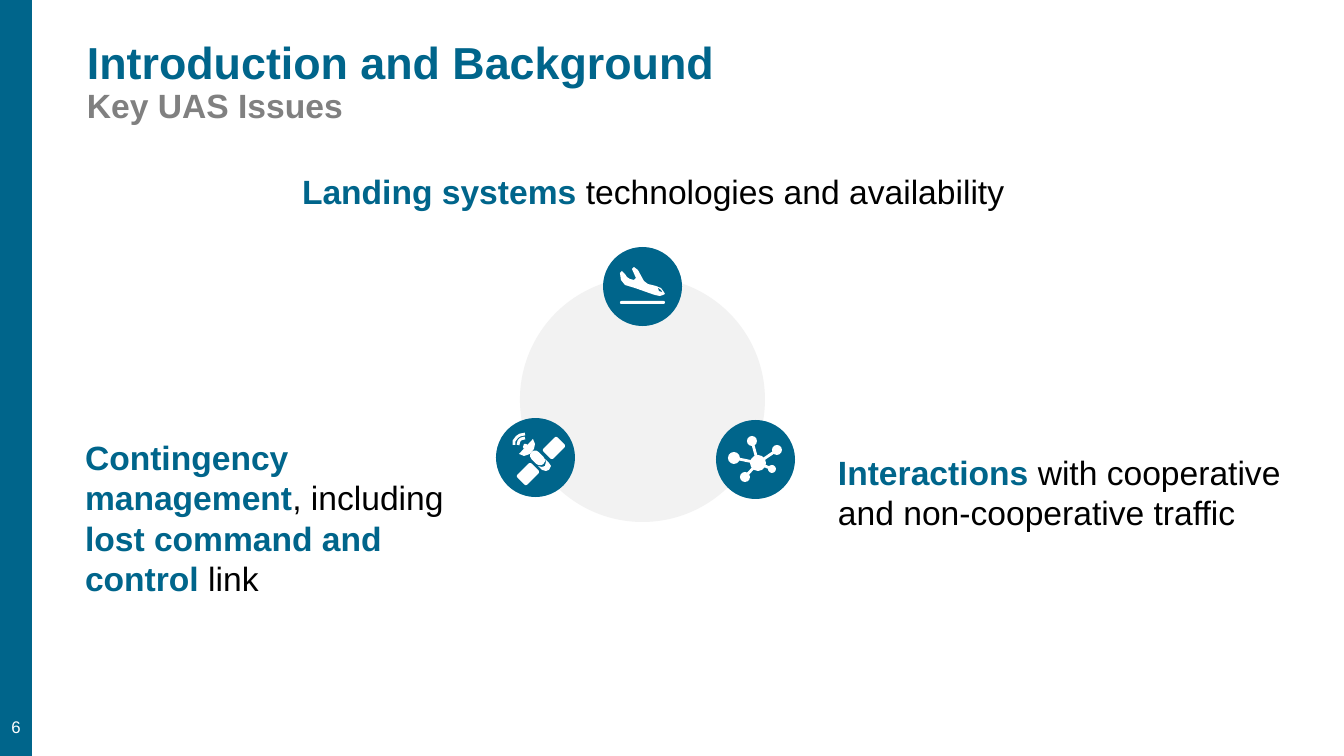
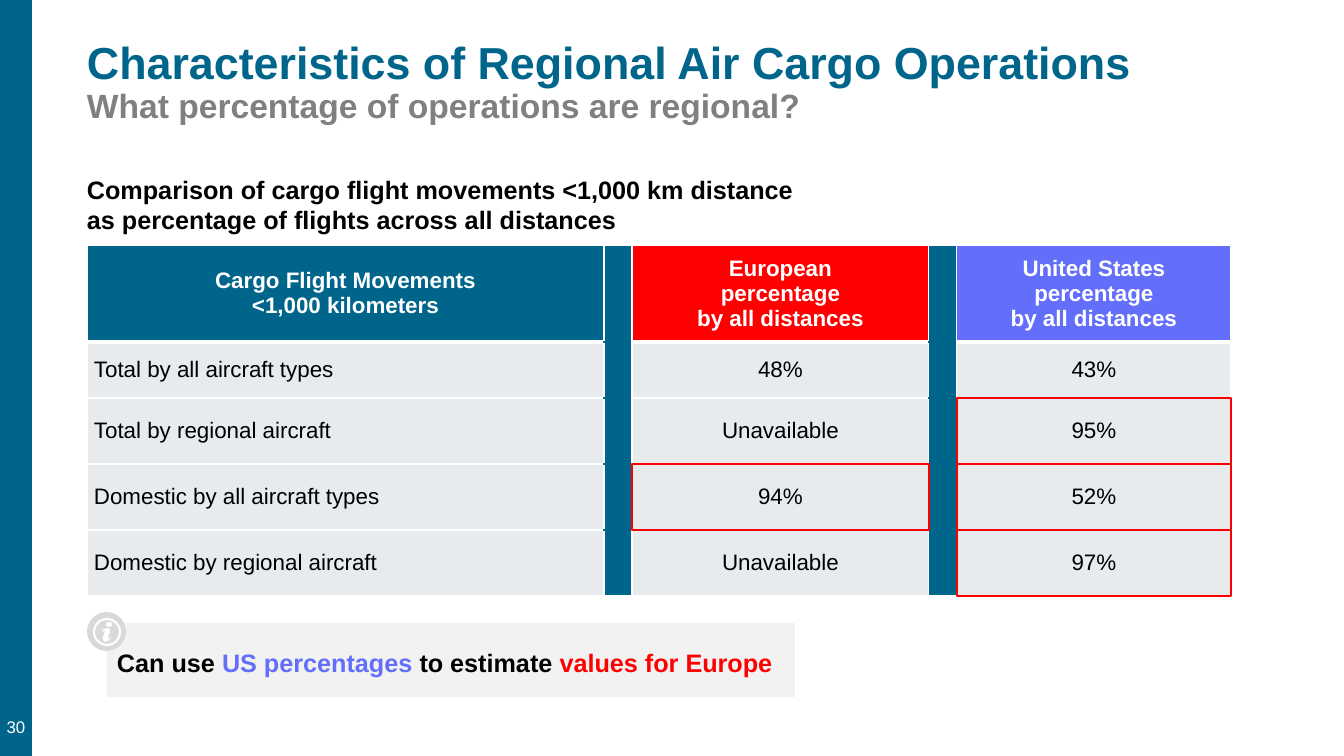
"""Build two briefing slides: key UAS issues and regional cargo percentages."""
from dataclasses import dataclass

from lxml import etree
from pptx import Presentation
from pptx.dml.color import RGBColor
from pptx.enum.shapes import MSO_CONNECTOR, MSO_SHAPE
from pptx.enum.text import MSO_ANCHOR, PP_ALIGN
from pptx.oxml.ns import qn
from pptx.shapes.autoshape import Shape
from pptx.shapes.shapetree import GroupShapes
from pptx.slide import Slide
from pptx.table import _Cell
from pptx.util import Emu, Pt

PX = 914400 / 100.8
FONT = "Arial"
TEAL = RGBColor(0x00, 0x65, 0x8B)
WHITE = RGBColor(0xFF, 0xFF, 0xFF)
BLACK = RGBColor(0x00, 0x00, 0x00)
GRAY = RGBColor(0x80, 0x80, 0x80)
PALE = RGBColor(0xF2, 0xF2, 0xF2)
SILVER = RGBColor(0xD9, 0xD9, 0xD9)
ROW_FILL = RGBColor(0xE7, 0xEB, 0xEE)
RED = RGBColor(0xFF, 0x00, 0x00)
VIOLET = RGBColor(0x63, 0x6E, 0xFA)

RECT, OVAL, ROUND = MSO_SHAPE.RECTANGLE, MSO_SHAPE.OVAL, MSO_SHAPE.ROUNDED_RECTANGLE
LEFT, CENTER = PP_ALIGN.LEFT, PP_ALIGN.CENTER
TOP, MIDDLE, BOTTOM = MSO_ANCHOR.TOP, MSO_ANCHOR.MIDDLE, MSO_ANCHOR.BOTTOM
STRAIGHT = MSO_CONNECTOR.STRAIGHT

Points = list[tuple[int, int]]


@dataclass(frozen=True)
class Box:
    """Hold a rectangle in px."""
    left: int
    top: int
    width: int
    height: int

    def emu(self) -> tuple[Emu, Emu, Emu, Emu]:
        """Return the rectangle in EMU."""
        return px(self.left), px(self.top), px(self.width), px(self.height)


@dataclass(frozen=True)
class Span:
    """Hold a stretch of text in one format."""
    text: str
    color: RGBColor = BLACK
    size: int = 24
    bold: bool = False
    new_line: bool = False


@dataclass(frozen=True)
class Node:
    """Hold a round network node by its centre."""
    x: int
    y: int
    diameter: int


SLIDE = Box(0, 0, 1344, 756)
BAND = Box(0, 0, 32, 756)

ISSUES = [
    (Box(75, 432, 415, 173), [
        Span("Contingency management", TEAL, bold=True), Span(", including "),
        Span("lost command and control ", TEAL, bold=True), Span("link")]),
    (Box(828, 447, 465, 92), [
        Span("Interactions ", TEAL, bold=True),
        Span("with cooperative and non-cooperative traffic")]),
    (Box(292, 166, 800, 50), [
        Span("Landing systems ", TEAL, bold=True),
        Span("technologies and availability")]),
]

PLANE = [(663, 295), (660, 296), (655, 295), (652, 294), (635, 288), (625, 285),
         (621, 280), (620, 273), (622, 271), (625, 274), (627, 277), (630, 279),
         (634, 280), (636, 278), (632, 269), (634, 267), (638, 270), (644, 281),
         (648, 284), (656, 286), (661, 288), (664, 292), (665, 294)]
COCKPIT = [(658, 288), (659, 291), (662, 292), (661, 290)]
DISH = [(519, 454), (524, 456), (530, 454), (534, 449), (535, 444), (533, 439)]
FEED = [(524, 444), (523, 447), (524, 449), (528, 445), (526, 444)]
NOSE = [(545, 466), (542, 467), (538, 466), (542, 470), (546, 471), (549, 470),
        (551, 466), (549, 463), (545, 459), (546, 462)]
WAVES = [[(518, 445), (519, 441), (521, 439), (525, 438)],
         [(514, 445), (514, 441), (517, 437), (520, 435), (525, 434)]]
INFO_STEM = [(102, 631), (104, 629), (107, 628), (110, 629), (110, 632), (108, 638),
             (109, 639), (111, 637), (111, 638), (108, 641), (105, 642), (103, 640),
             (103, 637), (105, 631), (104, 630), (103, 632)]
HUB = Node(758, 463, 16)
NODES = [Node(734, 458, 12), Node(752, 441, 10), Node(777, 450, 10),
         Node(772, 469, 8), Node(745, 477, 10)]

TABLE_LEFT, TABLE_TOP = 87, 245
COLUMNS = [517, 28, 297, 28, 274]
ROWS = [97, 56, 66, 66, 66]
HEADER_FILLS = [TEAL, TEAL, RED, TEAL, VIOLET]
TABLE_TEXT = [
    ["Cargo Flight Movements\n<1,000 kilometers", "",
     "European\npercentage\nby all distances", "",
     "United States percentage\nby all distances"],
    ["Total by all aircraft types", "", "48%", "", "43%"],
    ["Total by regional aircraft", "", "Unavailable", "", "95%"],
    ["Domestic by all aircraft types", "", "94%", "", "52%"],
    ["Domestic by regional aircraft", "", "Unavailable", "", "97%"],
]
HIGHLIGHTS = [(3, 2), (3, 4), (4, 4), (2, 4)]


def px(value: int) -> Emu:
    """Turn px into EMU."""
    return Emu(round(value * PX))


def add_span(para, text: str, *, color: RGBColor, size: int, bold: bool = False) -> None:
    """Add formatted text to a paragraph."""
    run = para.add_run()
    run.text = text
    run.font.name, run.font.size, run.font.bold = FONT, Pt(size), bold
    run.font.color.rgb = color


def add_text(page: Slide, box: Box, spans: list[Span], *, align=LEFT, anchor=TOP,
             inset: tuple[int, int] = (10, 5), wrap: bool = True,
             line_spacing: float = 1.0) -> None:
    """Add a text box with one paragraph of spans."""
    frame = page.shapes.add_textbox(*box.emu()).text_frame
    frame.word_wrap, frame.vertical_anchor = wrap, anchor
    frame.margin_left = frame.margin_right = px(inset[0])
    frame.margin_top = frame.margin_bottom = px(inset[1])
    para = frame.paragraphs[0]
    para.alignment, para.line_spacing = align, line_spacing
    for span in spans:
        if span.new_line:
            para.add_line_break()
        add_span(para, span.text, color=span.color, size=span.size, bold=span.bold)


def paint(shape: Shape, fill: RGBColor | None, line: RGBColor | None, weight: float) -> None:
    """Set fill and line and drop the shadow."""
    shape.shadow.inherit = False
    if fill is None:
        shape.fill.background()
    else:
        shape.fill.solid()
        shape.fill.fore_color.rgb = fill
    if line is None:
        shape.line.fill.background()
    else:
        shape.line.color.rgb = line
        shape.line.width = Pt(weight)


def add_preset(shapes: GroupShapes, kind: MSO_SHAPE, box: Box, *, fill: RGBColor | None = None,
               line: RGBColor | None = None, weight: float = 1.5, turn: int = 0) -> Shape:
    """Add a preset shape."""
    shape = shapes.add_shape(kind, *box.emu())
    shape.rotation = turn
    paint(shape, fill, line, weight)
    return shape


def add_outline(shapes: GroupShapes, points: Points, *, fill: RGBColor | None = None,
                line: RGBColor | None = None, weight: float = 2) -> None:
    """Add a freeform, closed when it is filled."""
    builder = shapes.build_freeform(*points[0], scale=PX)
    builder.add_line_segments(points[1:], close=fill is not None)
    paint(builder.convert_to_shape(), fill, line, weight)


def add_badge(page: Slide, box: Box, fill: RGBColor) -> GroupShapes:
    """Start an icon group on a round badge and return its shapes."""
    shapes = page.shapes.add_group_shape().shapes
    add_preset(shapes, OVAL, box, fill=fill)
    return shapes


def add_spoke(shapes: GroupShapes, start: Node, end: Node) -> None:
    """Join two network nodes."""
    spoke = shapes.add_connector(STRAIGHT, px(start.x), px(start.y), px(end.x), px(end.y))
    spoke.line.color.rgb, spoke.line.width = WHITE, Pt(2)
    etree.SubElement(spoke._element.spPr, qn("a:effectLst"))


def draw_satellite(page: Slide) -> None:
    """Draw the satellite icon."""
    shapes = add_badge(page, Box(496, 418, 79, 79), TEAL)
    for outline in (DISH, FEED, NOSE):
        add_outline(shapes, outline, fill=WHITE)
    for wave in WAVES:
        add_outline(shapes, wave, line=WHITE)
    for box, turn, rounding in ((Box(518, 467, 20, 14), 315, 0.16),
                                (Box(544, 441, 20, 14), 315, 0.16),
                                (Box(529, 453, 17, 10), 45, 0.5)):
        part = add_preset(shapes, ROUND, box, fill=WHITE, turn=turn)
        part.adjustments[0] = rounding


def draw_landing(page: Slide) -> None:
    """Draw the landing plane icon."""
    shapes = add_badge(page, Box(603, 247, 79, 79), TEAL)
    add_outline(shapes, PLANE, fill=WHITE)
    add_outline(shapes, COCKPIT, fill=TEAL)
    runway = add_preset(shapes, ROUND, Box(620, 301, 45, 3), fill=WHITE)
    runway.adjustments[0] = 0.5


def draw_network(page: Slide) -> None:
    """Draw the network icon."""
    shapes = add_badge(page, Box(716, 420, 79, 79), TEAL)
    for node in NODES:
        add_spoke(shapes, HUB, node)
    for node in [HUB, *NODES]:
        half = node.diameter // 2
        add_preset(shapes, OVAL, Box(node.x - half, node.y - half, node.diameter, node.diameter),
                   fill=WHITE)


def draw_info(page: Slide) -> None:
    """Draw the information icon."""
    shapes = add_badge(page, Box(87, 612, 39, 39), SILVER)
    add_preset(shapes, OVAL, Box(94, 619, 26, 26), line=WHITE)
    add_preset(shapes, OVAL, Box(106, 622, 6, 5), fill=WHITE)
    add_outline(shapes, INFO_STEM, fill=WHITE)


def set_borders(cell: _Cell, borders: dict[str, tuple[RGBColor, int]]) -> None:
    """Set the cell borders, given in schema order."""
    properties = cell._tc.get_or_add_tcPr()
    for index, (side, (color, weight)) in enumerate(borders.items()):
        line = etree.Element(qn(f"a:ln{side}"), w=str(Pt(weight)))
        fill = etree.SubElement(line, qn("a:solidFill"))
        etree.SubElement(fill, qn("a:srgbClr"), val=str(color))
        properties.insert(index, line)


def fill_cell(cell: _Cell, row: int, column: int) -> None:
    """Write and format one table cell."""
    header, spacer, last = row == 0, column % 2 == 1, row == len(ROWS) - 1
    cell.margin_left = cell.margin_right = px(7)
    cell.margin_top = cell.margin_bottom = 0
    cell.vertical_anchor = MIDDLE
    cell.fill.solid()
    cell.fill.fore_color.rgb = HEADER_FILLS[column] if header or spacer else ROW_FILL
    above = (TEAL, 1) if spacer and not header else (WHITE, 3 if row == 1 else 1)
    below = (TEAL, 1) if spacer and not last else (WHITE, 3 if header else 1)
    set_borders(cell, {"L": (WHITE, 1), "R": (WHITE, 1), "T": above, "B": below})
    if spacer:
        return
    for index, text in enumerate(TABLE_TEXT[row][column].split("\n")):
        frame = cell.text_frame
        para = frame.add_paragraph() if index else frame.paragraphs[0]
        para.alignment = CENTER if header or column else LEFT
        add_span(para, text, color=WHITE if header else BLACK, size=16, bold=header)


def draw_table(page: Slide) -> None:
    """Draw the percentage table and its highlighted cells."""
    box = Box(TABLE_LEFT, TABLE_TOP, sum(COLUMNS), sum(ROWS))
    table = page.shapes.add_table(len(ROWS), len(COLUMNS), *box.emu()).table
    table.first_row = table.horz_banding = False
    for column, width in enumerate(COLUMNS):
        table.columns[column].width = px(width)
    for row, height in enumerate(ROWS):
        table.rows[row].height = px(height)
        for column in range(len(COLUMNS)):
            fill_cell(table.cell(row, column), row, column)
    for row, column in HIGHLIGHTS:
        frame = Box(TABLE_LEFT + sum(COLUMNS[:column]), TABLE_TOP + sum(ROWS[:row]),
                    COLUMNS[column], ROWS[row])
        add_preset(page.shapes, RECT, frame, line=RED)


def add_page(deck, title: str, subtitle: str, number: int) -> Slide:
    """Add a slide with the side band, title and page number."""
    page = deck.slides.add_slide(deck.slide_layouts[6])
    add_preset(page.shapes, RECT, BAND, fill=TEAL)
    add_text(page, Box(77, 36, 1267, 109), [
        Span(title, TEAL, 32, True), Span(subtitle, GRAY, 24, True, new_line=True)],
        line_spacing=0.9)
    add_text(page, Box(0, 589, 32, 158), [Span(str(number), WHITE, 12)], align=CENTER,
             anchor=BOTTOM, inset=(4, 10), wrap=False)
    return page


def main() -> None:
    """Build and save the deck."""
    deck = Presentation()
    deck.slide_width, deck.slide_height = px(SLIDE.width), px(SLIDE.height)

    page = add_page(deck, "Introduction and Background", "Key UAS Issues", 6)
    add_preset(page.shapes, OVAL, Box(520, 277, 245, 245), fill=PALE)
    for box, spans in ISSUES:
        add_text(page, box, spans)
    for draw_icon in (draw_satellite, draw_landing, draw_network):
        draw_icon(page)

    page = add_page(deck, "Characteristics of Regional Air Cargo Operations",
                    "What percentage of operations are regional?", 30)
    draw_table(page)
    add_text(page, Box(87, 174, 734, 61), [
        Span("Comparison of cargo flight movements <1,000 km distance "
             "as percentage of flights across all distances", size=18, bold=True)],
        inset=(0, 0))
    add_preset(page.shapes, RECT, Box(107, 623, 688, 74), fill=PALE)
    draw_info(page)
    add_text(page, Box(107, 642, 682, 40), [
        Span("Can use ", BLACK, 18, True), Span("US percentages ", VIOLET, 18, True),
        Span("to estimate ", BLACK, 18, True), Span("values for Europe", RED, 18, True)],
        wrap=False)
    deck.save("out.pptx")


if __name__ == "__main__":
    main()
